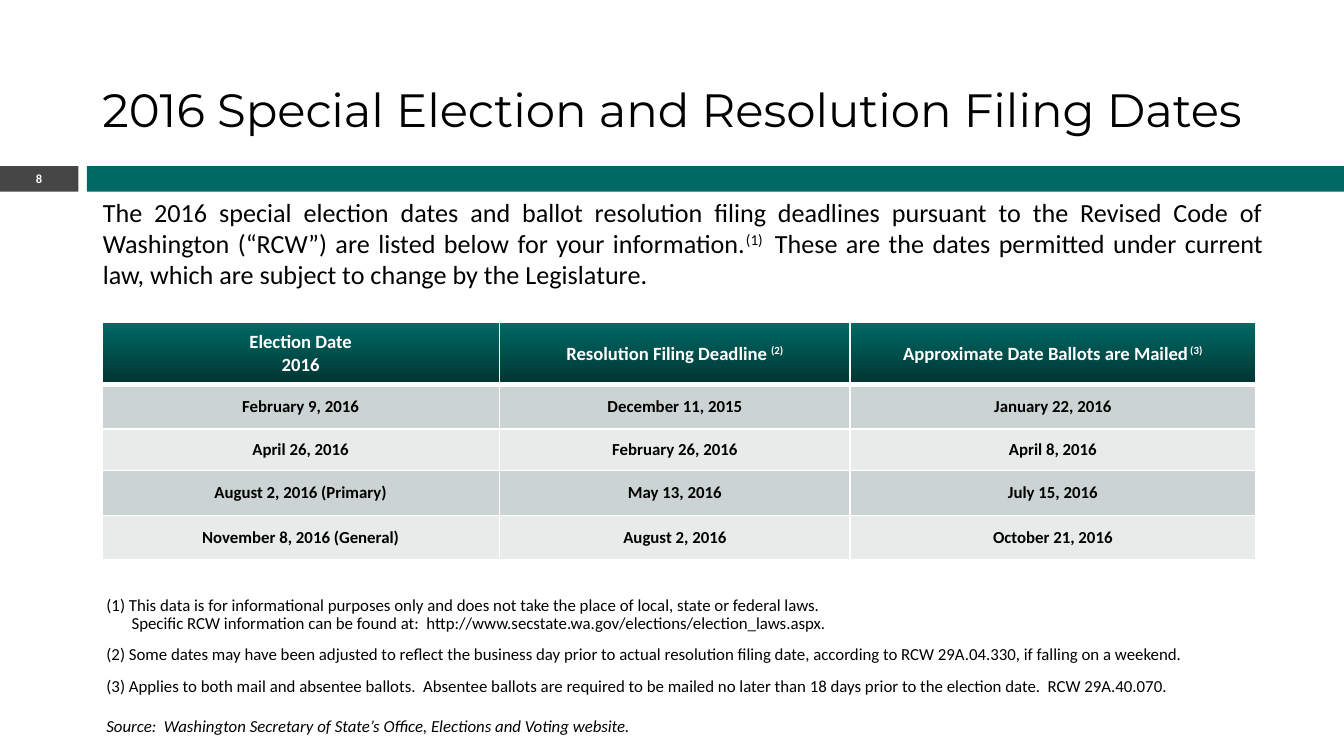
from lxml import etree
from pptx import Presentation
from pptx.dml.color import RGBColor
from pptx.enum.shapes import MSO_SHAPE
from pptx.enum.text import MSO_ANCHOR, PP_ALIGN
from pptx.oxml.ns import qn
from pptx.util import Pt

RECT = MSO_SHAPE.RECTANGLE
TOP, MIDDLE, BOTTOM = MSO_ANCHOR.TOP, MSO_ANCHOR.MIDDLE, MSO_ANCHOR.BOTTOM
LEFT, CENTER, JUSTIFY = PP_ALIGN.LEFT, PP_ALIGN.CENTER, PP_ALIGN.JUSTIFY

WHITE, BLACK, GRAY = "FFFFFF", "000000", "464646"
TEAL, DARK_TEAL = "006964", "003432"
BANDS = ("CCD4D3", "E7EBEA")

COLUMN_WIDTHS = (213, 188, 217)
ROW_HEIGHTS = (33.4, 23.5, 22.5, 24, 24)
HEADINGS = (
    (("Election Date",), ("2016",)),
    (("Resolution Filing Deadline ", "(2)"),),
    (("Approximate Date Ballots are Mailed", " (3)"),),
)
DATES = (
    ("February 9, 2016", "December 11, 2015", "January 22, 2016"),
    ("April 26, 2016", "February 26, 2016", "April 8, 2016"),
    ("August 2, 2016 (Primary)", "May 13, 2016", "July 15, 2016"),
    ("November 8, 2016 (General)", "August 2, 2016", "October 21, 2016"),
)
INTRO = (
    "The 2016 special election dates and ballot resolution filing deadlines pursuant to the "
    "Revised Code of Washington (“RCW”) are listed below for your information.",
    "(1)  ",
    "These are the dates permitted under current law, which are subject to change by the Legislature.",
)
# Each footnote: its lines, space after
FOOTNOTES = (
    (("(1) This data is for informational purposes only and does not take the place of "
      "local, state or federal laws.  ",
      "Specific RCW information can be found at:  "
      "http://www.secstate.wa.gov/elections/election_laws.aspx."), 6),
    (("(2) Some dates may have been adjusted to reflect the business day prior to actual "
      "resolution filing date, according to RCW 29A.04.330, if falling on a weekend.",), 6),
    (("(3) Applies to both mail and absentee ballots.  Absentee ballots are required to be "
      "mailed no later than 18 days prior to the election date.  RCW 29A.40.070.",), 0),
)
SOURCE = "Source:  Washington Secretary of State’s Office, Elections and Voting website."


def rgb(color):
    return RGBColor.from_string(color)


def add_run(paragraph, text, size, color=BLACK, font="Calibri", bold=False, italic=False,
            raised=False):
    run = paragraph.add_run()
    run.text = text
    run.font.size = Pt(size)
    run.font.name = font
    run.font.color.rgb = rgb(color)
    run.font.bold = bold
    run.font.italic = italic
    if raised:
        run.font._element.set("baseline", "30000")


def add_runs(paragraph, texts, **style):
    """Add alternating normal and superscript runs."""
    for i, text in enumerate(texts):
        add_run(paragraph, text, raised=i % 2 == 1, **style)


def next_paragraph(frame, align=LEFT):
    first = frame.paragraphs[0]
    paragraph = frame.add_paragraph() if first.runs else first
    paragraph.alignment = align
    return paragraph


def add_text_frame(slide, left, top, width, height, anchor=TOP):
    box = slide.shapes.add_textbox(Pt(left), Pt(top), Pt(width), Pt(height))
    frame = box.text_frame
    frame.word_wrap = True
    frame.vertical_anchor = anchor
    return frame


def add_bar(slide, left, width, color):
    bar = slide.shapes.add_shape(RECT, Pt(left), Pt(89), Pt(width), Pt(13.7))
    bar.shadow.inherit = False
    bar.fill.solid()
    bar.fill.fore_color.rgb = rgb(color)
    bar.line.fill.background()
    return bar


def set_borders(cell, **widths):
    """Draw white borders; the keys are L, R, T and B, in that order."""
    properties = cell._tc.get_or_add_tcPr()
    for i, (side, width) in enumerate(widths.items()):
        line = etree.Element(qn(f"a:ln{side}"), w=str(Pt(width)))
        fill = etree.SubElement(line, qn("a:solidFill"))
        etree.SubElement(fill, qn("a:srgbClr"), val=WHITE)
        properties.insert(i, line)


def fill_heading(cell, lines):
    cell.fill.gradient()
    cell.fill.gradient_angle = 90
    for stop, color, position in zip(cell.fill.gradient_stops, (DARK_TEAL, TEAL), (0, 1)):
        stop.color.rgb = rgb(color)
        stop.position = position
    for texts in lines:
        add_runs(next_paragraph(cell.text_frame, CENTER), texts, size=10, color=WHITE, bold=True)
    set_borders(cell, L=1, R=1, T=1, B=3)


def fill_date(cell, date, row):
    cell.fill.solid()
    cell.fill.fore_color.rgb = rgb(BANDS[row % 2])
    add_run(next_paragraph(cell.text_frame, CENTER), date, 9, bold=True)
    set_borders(cell, L=1, R=1, T=1 if row else 3, B=1)


def add_dates_table(slide):
    table = slide.shapes.add_table(
        len(ROW_HEIGHTS), len(COLUMN_WIDTHS), Pt(54.5), Pt(172.8),
        Pt(sum(COLUMN_WIDTHS)), Pt(sum(ROW_HEIGHTS))).table
    for column, width in zip(table.columns, COLUMN_WIDTHS):
        column.width = Pt(width)
    for row, height in zip(table.rows, ROW_HEIGHTS):
        row.height = Pt(height)
    for cell in table.iter_cells():
        cell.vertical_anchor = MIDDLE
    for c, lines in enumerate(HEADINGS):
        fill_heading(table.cell(0, c), lines)
    for r, dates in enumerate(DATES):
        for c, date in enumerate(dates):
            fill_date(table.cell(r + 1, c), date, r)


def add_note_paragraph(frame, before, after):
    paragraph = next_paragraph(frame)
    paragraph.line_spacing = 0.9
    paragraph.space_before = Pt(before)
    paragraph.space_after = Pt(after)
    return paragraph


def add_footnotes(slide):
    frame = add_text_frame(slide, 54, 316.8, 630, 72)
    frame.margin_left = frame.margin_right = frame.margin_top = frame.margin_bottom = Pt(3)
    for lines, after in FOOTNOTES:
        note = add_note_paragraph(frame, 1, after)
        hanging = note._p.get_or_add_pPr()
        hanging.set("marL", str(Pt(13.5)))
        hanging.set("indent", str(Pt(-13.5)))
        for i, line in enumerate(lines):
            if i:
                note.add_line_break()
            add_run(note, line, 9)
    add_run(add_note_paragraph(frame, 12, 0), SOURCE, 9, italic=True)


def main():
    prs = Presentation()
    prs.slide_width, prs.slide_height = Pt(720), Pt(405)
    slide = prs.slides.add_slide(prs.slide_layouts[6])

    number = add_bar(slide, 0, 42, GRAY).text_frame
    number.vertical_anchor = MIDDLE
    number.margin_top = number.margin_bottom = 0
    add_run(next_paragraph(number, CENTER), "8", 6.7, WHITE, bold=True)
    add_bar(slide, 46.6, 673.4, TEAL)

    title = add_text_frame(slide, 6, 10.8, 708, 66.2, BOTTOM)
    add_run(next_paragraph(title, CENTER), "2016 Special Election and Resolution Filing Dates",
            25, font="Montserrat")
    add_dates_table(slide)
    intro = add_text_frame(slide, 48, 101.5, 636, 58.3)
    add_runs(next_paragraph(intro, JUSTIFY), INTRO, size=14)
    add_footnotes(slide)
    prs.save("out.pptx")


if __name__ == "__main__":
    main()
